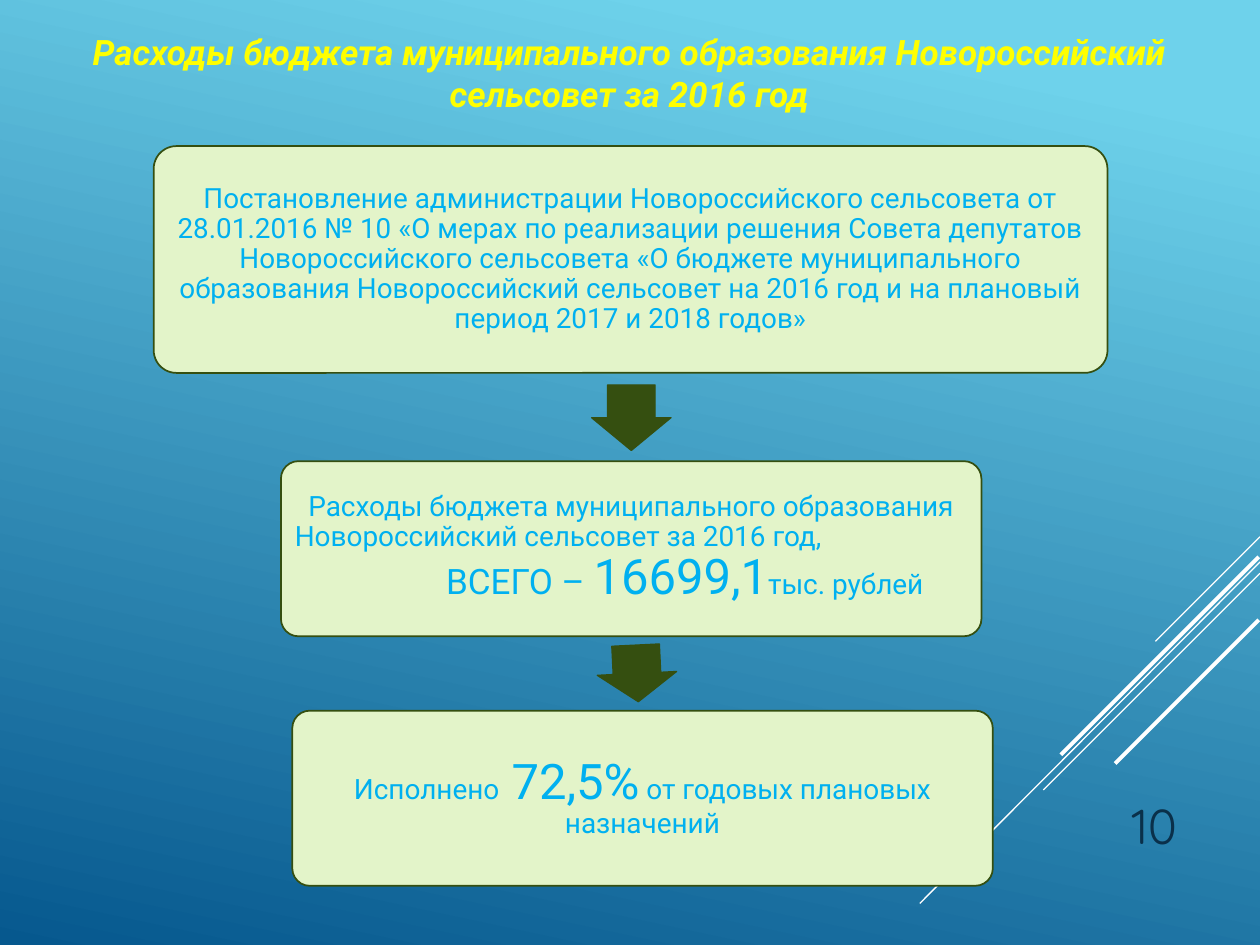
from pptx import Presentation
from pptx.dml.color import RGBColor as Rgb
from pptx.enum.shapes import MSO_CONNECTOR as Connector, MSO_SHAPE as Preset
from pptx.enum.text import MSO_ANCHOR as Anchor, PP_ALIGN as Align
from pptx.oxml.ns import qn
from pptx.util import Inches, Pt

COLORS = {
    "sky": "6ED2EB", "deep": "06588E", "white": "FFFFFF", "number": "0A304A",
    "title": "FFFF00", "card": "E3F4C9", "olive": "354F10", "text": "00B0F0",
}


class BudgetSlide:
    """Holds the style and the current slide, and adds each kind of element."""

    font = "Roboto"

    def __init__(self, deck):
        self.slide = deck.slides.add_slide(deck.slide_layouts[5])
        self.shapes = self.slide.shapes

    def color(self, name):
        return Rgb.from_string(COLORS[name])

    def apply(self, target, formats):
        for name, value in formats.items():
            setattr(target, name, value)

    def place(self, shape, box):
        names = ("left", "top", "width", "height")
        self.apply(shape, dict(zip(names, map(Inches, box))))

    def background(self, angle):
        fill = self.slide.background.fill
        fill.gradient()
        fill.gradient_angle = 360 - angle
        for stop, name, position in zip(fill.gradient_stops, ("sky", "deep"), (0.1, 1)):
            stop.color.rgb = self.color(name)
            stop.position = position

    def run(self, paragraph, text, color, **formats):
        run = paragraph.add_run()
        run.text = text
        self.apply(run.font, {"name": self.font, **formats})
        run.font.color.rgb = self.color(color)

    def title(self, text, box):
        title = self.shapes.title
        self.place(title, box)
        self.apply(title.text_frame, {"vertical_anchor": Anchor.TOP, "word_wrap": True})
        paragraph = title.text_frame.paragraphs[0]
        paragraph.alignment = Align.CENTER
        self.run(paragraph, text, "title", size=Pt(20), bold=True, italic=True)

    def number(self, text, box):
        frame = self.shapes.add_textbox(*map(Inches, box)).text_frame
        self.apply(frame, {"vertical_anchor": Anchor.BOTTOM, "word_wrap": True})
        paragraph = frame.paragraphs[0]
        paragraph.alignment = Align.RIGHT
        self.run(paragraph, text, "number", size=Pt(28), name="Quicksand")

    def stripe(self, start, end, width):
        stripe = self.shapes.add_connector(Connector.STRAIGHT, *map(Inches, start + end))
        stripe.line.color.rgb = self.color("white")
        stripe.line.width = Pt(width)
        properties = stripe._element.spPr
        properties.append(properties.makeelement(qn("a:effectLst"), {}))

    def shape(self, preset, box, fill, width):
        shape = self.shapes.add_shape(preset, *map(Inches, box))
        shape.shadow.inherit = False
        shape.fill.solid()
        shape.fill.fore_color.rgb = self.color(fill)
        shape.line.color.rgb = self.color("olive")
        shape.line.width = Pt(width)
        return shape

    def card(self, box, lines):
        card = self.shape(Preset.ROUNDED_RECTANGLE, box, "card", 1)
        card.adjustments[0] = 0.1
        frame = card.text_frame
        margins = ("margin_left", "margin_top", "margin_right", "margin_bottom")
        self.apply(frame, {"vertical_anchor": Anchor.MIDDLE, "word_wrap": True,
                           **dict.fromkeys(margins, Inches(0.07))})
        for index, (align, indent, parts) in enumerate(lines):
            paragraph = frame.add_paragraph() if index else frame.paragraphs[0]
            self.apply(paragraph, {"alignment": align, "line_spacing": 0.9})
            if indent:
                paragraph._p.get_or_add_pPr().set("marL", str(Inches(indent)))
            for text, size in parts:
                self.run(paragraph, text, "text", size=Pt(size))

    def arrow(self, box, rotation):
        arrow = self.shape(Preset.RIGHT_ARROW, box, "olive", 0.75)
        arrow.rotation = rotation
        arrow.adjustments[0] = 0.6
        arrow.adjustments[1] = 0.5


def main():
    deck = Presentation()
    deck.slide_width, deck.slide_height = Inches(10), Inches(7.5)
    page = BudgetSlide(deck)
    page.background(102)
    for start, end, width in (
        ((10, 4.26), (9.17, 5.09), 0.75),
        ((10, 4.46), (7.3, 7.17), 0.75),
        ((10, 4.55), (8.28, 6.27), 0.75),
        ((9.99, 4.42), (8.42, 5.99), 2.25),
        ((9.99, 4.92), (8.85, 6.06), 2.25),
    ):
        page.stripe(start, end, width)
    page.number("10", (8.5, 6.1, 0.94, 0.73))
    page.title("Расходы бюджета муниципального образования Новороссийский "
               "сельсовет за 2016 год", (0.43, 0.19, 9.13, 0.77))

    decree = ("Постановление администрации Новороссийского сельсовета от 28.01.2016 № 10 "
              "«О мерах по реализации решения Совета депутатов Новороссийского сельсовета "
              "«О бюджете муниципального образования Новороссийский сельсовет на 2016 год "
              "и на плановый период 2017 и 2018 годов»")
    page.card((1.22, 1.16, 7.57, 1.8), [(Align.CENTER, 0, [(decree, 15.9)])])
    page.arrow((4.75, 3, 0.52, 0.63), 90)
    page.card((2.23, 3.66, 5.56, 1.39), [
        (Align.CENTER, 0, [("Расходы бюджета муниципального образования", 16)]),
        (Align.LEFT, 0, [("Новороссийский сельсовет за 2016 год,", 16)]),
        (Align.LEFT, 1.2, [("ВСЕГО – ", 20), ("16699,1", 28), ("тыс. рублей", 16)]),
    ])
    page.arrow((4.83, 5.03, 0.45, 0.63), 87.2)
    page.card((2.32, 5.64, 5.56, 1.39), [
        (Align.CENTER, 0, [("Исполнено", 16), (" 72,5%", 28),
                           (" от годовых плановых назначений", 16)]),
    ])
    deck.save("out.pptx")


if __name__ == "__main__":
    main()
